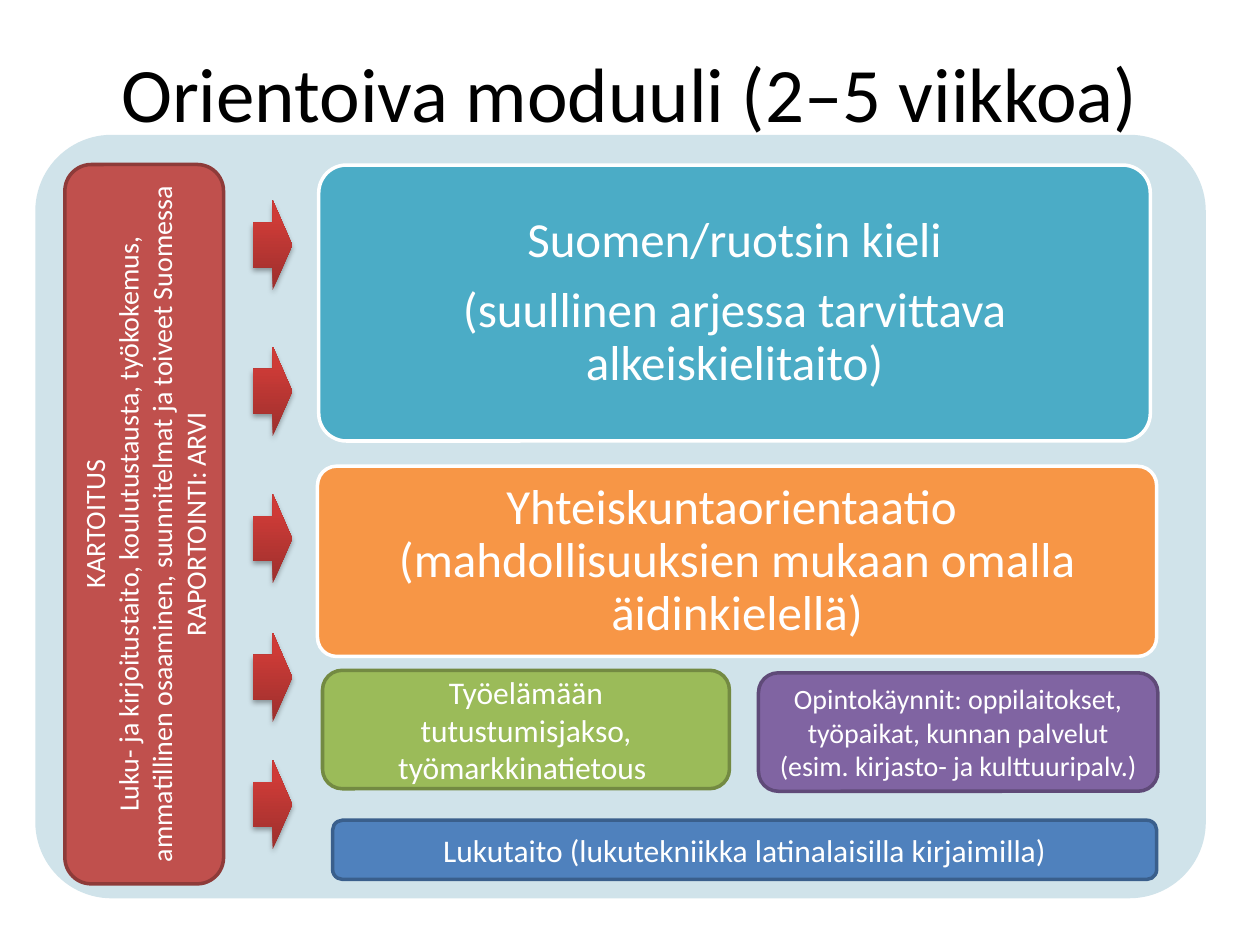
from dataclasses import dataclass, field

from lxml import etree
from pptx import Presentation
from pptx.dml.color import RGBColor
from pptx.enum.shapes import MSO_SHAPE
from pptx.enum.text import MSO_ANCHOR, PP_ALIGN
from pptx.oxml.ns import qn
from pptx.util import Inches, Pt

ROUND = MSO_SHAPE.ROUNDED_RECTANGLE
FLOW = MSO_SHAPE.FLOWCHART_ALTERNATE_PROCESS
ARROW = MSO_SHAPE.RIGHT_ARROW
MIDDLE = MSO_ANCHOR.MIDDLE
CENTER = PP_ALIGN.CENTER

HUES = {
    "black": "000000", "white": "FFFFFF", "pale": "D0E3EA",
    "teal": "4BACC6", "orange": "F79646",
    "red": "C0504D", "maroon": "8E3B39",
    "blue": "4F81BD", "navy": "3A5F8C",
    "green": "9BBB59", "olive": "738A42",
    "purple": "8064A2", "plum": "5F4A78",
    "dark": "9C2F2D", "light": "CE3B37",
}
FRAME = {"word_wrap": True, "vertical_anchor": MIDDLE}
TIGHT = {
    "margin_left": Inches(0.08), "margin_right": Inches(0.08),
    "margin_top": Inches(0.06), "margin_bottom": Inches(0.06),
}
LOOSE = {"line_spacing": 0.9, "space_after": Pt(10)}


@dataclass
class Box:
    area: tuple[float, float, float, float]
    fill: str
    edge: str | None = None
    lines: tuple[str, ...] = ()
    size: int = 18
    kind: int = ROUND
    bend: float | None = None
    turn: int = 0
    frame: dict = field(default_factory=dict)
    para: dict = field(default_factory=dict)


BOXES = (
    Box((0.28, 1.07, 9.29, 6.06), "pale", bend=0.1),
    Box((2.53, 1.31, 6.6, 2.19), "teal", "white",
        ("Suomen/ruotsin kieli",
         "(suullinen arjessa tarvittava alkeiskielitaito)"),
        28, bend=0.1, frame=TIGHT, para=LOOSE),
    Box((2.52, 3.7, 6.66, 1.51), "orange", "white",
        ("Yhteiskuntaorientaatio \n(mahdollisuuksien mukaan omalla äidinkielellä)",),
        28, bend=0.1, frame=TIGHT, para=LOOSE),
    Box((-1.71, 3.53, 5.71, 1.26), "red", "maroon",
        ("KARTOITUS",
         "Luku- ja kirjoitustaito, koulutustausta, työkokemus, "
         "ammatillinen osaaminen, suunnitelmat ja toiveet Suomessa",
         "RAPORTOINTI: ARVI"),
        16, turn=270),
    Box((2.64, 6.51, 6.54, 0.47), "blue", "navy",
        ("Lukutaito (lukutekniikka latinalaisilla kirjaimilla)",), kind=FLOW),
    Box((2.56, 5.32, 3.23, 0.94), "green", "olive",
        ("Työelämään tutustumisjakso, työmarkkinatietous ",)),
    Box((6.02, 5.34, 3.17, 0.94), "purple", "plum",
        ("Opintokäynnit: oppilaitokset, työpaikat, kunnan palvelut "
         "(esim. kirjasto- ja kulttuuripalv.)",), 16),
)
ARROW_TOPS = (1.59, 2.75, 3.92, 5.02, 6.03)


def color(name: str) -> RGBColor:
    return RGBColor.from_string(HUES[name])


def apply(item, form: dict) -> None:
    for key, value in form.items():
        setattr(item, key, value)


def write(shape, lines: tuple[str, ...], size: int, hue: str,
          frame: dict, para: dict) -> None:
    body = shape.text_frame
    apply(body, FRAME | frame)
    for i, line in enumerate(lines):
        part = body.add_paragraph() if i else body.paragraphs[0]
        part.text = line
        apply(part, {"alignment": CENTER} | para)
        for run in part.runs:
            apply(run.font, {"name": "Calibri", "size": Pt(size)})
            run.font.color.rgb = color(hue)


def draw_box(slide, box: Box) -> None:
    shape = slide.shapes.add_shape(box.kind, *map(Inches, box.area))
    shape.shadow.inherit = False
    shape.rotation = box.turn
    if box.bend is not None:
        shape.adjustments[0] = box.bend
    shape.fill.solid()
    shape.fill.fore_color.rgb = color(box.fill)
    if box.edge:
        shape.line.color.rgb = color(box.edge)
        shape.line.width = Pt(2)
    else:
        shape.line.fill.background()
    write(shape, box.lines, box.size, "white", box.frame, box.para)


def draw_arrow(slide, top: float) -> None:
    area = (2.01, top, 0.31, 0.71)
    shape = slide.shapes.add_shape(ARROW, *map(Inches, area))
    shape.line.fill.background()
    shape.fill.gradient()
    shape.fill.gradient_angle = 90
    tones = (("dark", 0), ("light", 0.8))
    for stop, (hue, place) in zip(shape.fill.gradient_stops, tones):
        stop.color.rgb = color(hue)
        stop.position = place
    shape.shadow.inherit = False
    glow = shape._element.spPr.find(qn("a:effectLst"))
    cast = etree.SubElement(glow, qn("a:outerShdw"), {
        "blurRad": str(Pt(3.1)), "dist": str(Pt(1.8)),
        "dir": "5400000", "rotWithShape": "0",
    })
    tint = etree.SubElement(cast, qn("a:srgbClr"), val=HUES["black"])
    etree.SubElement(tint, qn("a:alpha"), val="35000")


def main() -> None:
    deck = Presentation()
    apply(deck, {"slide_width": Inches(10), "slide_height": Inches(7.5)})
    slide = deck.slides.add_slide(deck.slide_layouts[6])
    title = slide.shapes.add_textbox(*map(Inches, (0.5, 0.3, 9, 0.85)))
    write(title, ("Orientoiva moduuli (2–5 viikkoa)",), 44, "black", {}, {})
    for box in BOXES:
        draw_box(slide, box)
    for top in ARROW_TOPS:
        draw_arrow(slide, top)
    deck.save("out.pptx")


if __name__ == "__main__":
    main()
